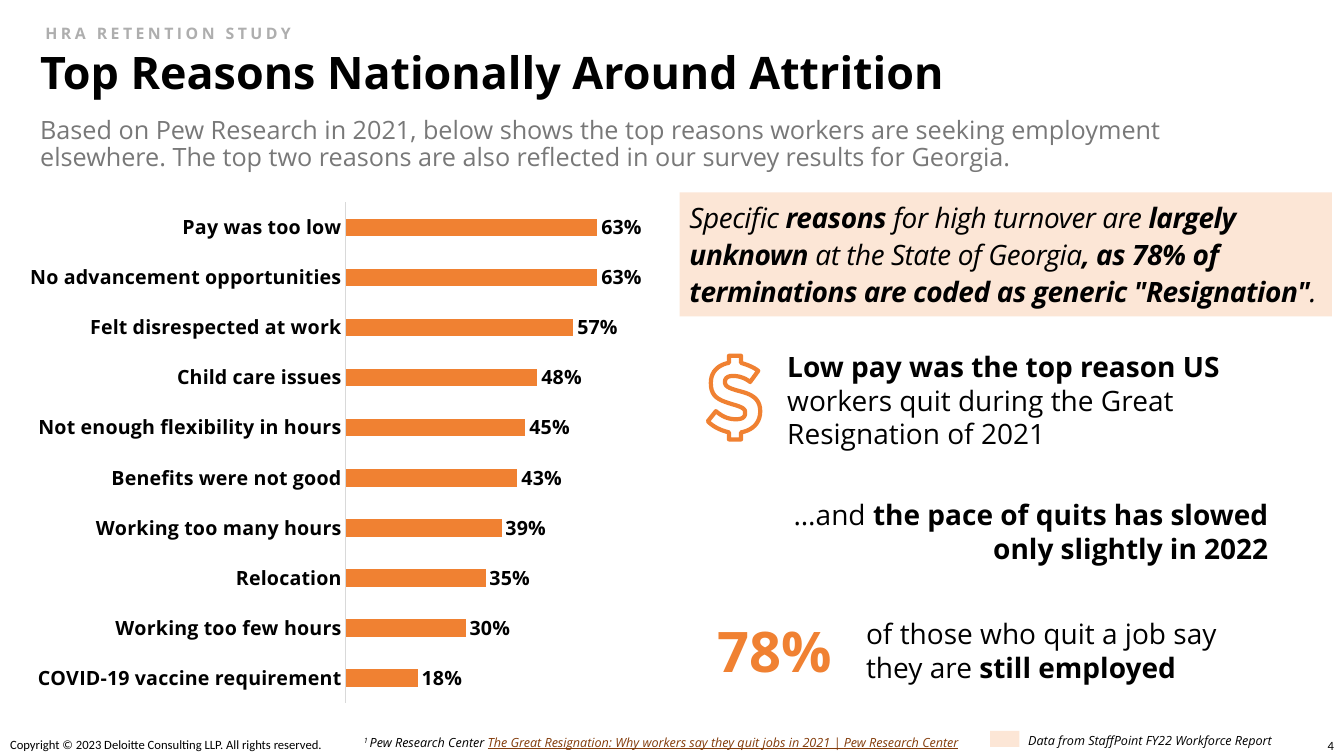
from lxml.etree import SubElement, Element
from pptx import Presentation
from pptx.chart.data import CategoryChartData
from pptx.dml.color import RGBColor
from pptx.enum.chart import XL_CHART_TYPE, XL_LABEL_POSITION, XL_TICK_MARK
from pptx.enum.shapes import MSO_SHAPE
from pptx.enum.text import MSO_ANCHOR, PP_ALIGN
from pptx.oxml.ns import qn
from pptx.util import Emu, Pt

EMU_PER_PX = 9144
ORANGE, PEACH, BLACK = "F08132", "FCE6D6", "000000"
BODY_FONT, FOOTER_FONT = "Open Sans", "Calibri"

REASONS = {
    "Pay was too low": 0.63,
    "No advancement opportunities": 0.63,
    "Felt disrespected at work": 0.57,
    "Child care issues": 0.48,
    "Not enough flexibility in hours": 0.45,
    "Benefits were not good": 0.43,
    "Working too many hours": 0.39,
    "Relocation": 0.35,
    "Working too few hours": 0.3,
    "COVID-19 vaccine requirement": 0.18,
}

DOLLAR_START = (733, 388)
DOLLAR_OUTLINE = [
    (722, 385, 719, 383, 719, 379), (719, 375, 722, 373, 727, 373),
    (733, 373, 739, 375, 744, 379), (752, 368), (747, 364, 741, 362, 735, 360),
    (735, 353), (723, 353), (723, 360), (712, 362, 705, 369, 705, 380),
    (705, 394, 713, 397, 726, 401), (737, 404, 739, 406, 739, 409), (739, 410),
    (739, 414, 736, 416, 730, 416), (722, 416, 716, 413, 710, 408), (702, 418),
    (708, 424, 715, 427, 723, 429), (723, 436), (735, 436), (735, 429),
    (746, 427, 754, 420, 754, 408), (754, 396, 746, 391, 733, 388),
]
CURVE_STEPS = 10


def px(length):
    return Emu(int(length * EMU_PER_PX))


def color(hex_string):
    return RGBColor.from_string(hex_string)


def style_font(font, size, hex_string=BLACK, bold=False, name=BODY_FONT):
    font.name, font.size, font.bold = name, Pt(size), bold
    font.color.rgb = color(hex_string)


def write_text(shape, runs, size, hex_string=BLACK, name=BODY_FONT, bold=None,
               italic=None, align=PP_ALIGN.LEFT, line_spacing=None,
               tracking=None, inset=True, anchor=MSO_ANCHOR.TOP):
    frame = shape.text_frame
    frame.word_wrap = True
    frame.vertical_anchor = anchor
    if not inset:
        frame.margin_left = frame.margin_right = 0
        frame.margin_top = frame.margin_bottom = 0
    paragraph = frame.paragraphs[0]
    paragraph.alignment = align
    paragraph.line_spacing = line_spacing
    style_font(paragraph.font, size, hex_string, bold, name)
    paragraph.font.italic = italic
    for text, *emphasis in runs:
        run = paragraph.add_run()
        run.text = text
        if emphasis:
            run.font.bold = True
        if tracking:
            run._r.get_or_add_rPr().set("spc", str(tracking))
    return paragraph


def add_text(slide, box, runs, size, **options):
    text_box = slide.shapes.add_textbox(*map(px, box))
    return write_text(text_box, runs, size, **options)


def add_panel(slide, box):
    panel = slide.shapes.add_shape(MSO_SHAPE.RECTANGLE, *map(px, box))
    panel.shadow.inherit = False
    panel.fill.solid()
    panel.fill.fore_color.rgb = color(PEACH)
    panel.line.fill.background()
    return panel


def curve_points(start, first, second, end):
    for step in range(1, CURVE_STEPS + 1):
        t = step / CURVE_STEPS
        u = 1 - t
        yield tuple(u**3 * a + 3 * u * u * t * b + 3 * u * t * t * c + t**3 * d
                    for a, b, c, d in zip(start, first, second, end))


def add_dollar_sign(slide):
    points = [DOLLAR_START]
    for segment in DOLLAR_OUTLINE:
        if len(segment) == 2:
            points.append(segment)
        else:
            points.extend(curve_points(points[-1], segment[:2], segment[2:4], segment[4:]))
    builder = slide.shapes.build_freeform(*points[0], scale=EMU_PER_PX)
    builder = slide.shapes.build_freeform(*map(px, points[0]))
    builder.add_line_segments([tuple(map(px, point)) for point in points[1:]], close=True)
    dollar = builder.convert_to_shape()
    dollar.shadow.inherit = False
    dollar.fill.background()
    dollar.line.color.rgb = color(ORANGE)
    dollar.line.width = Pt(3)


def set_plot_layout(chart, x, y, width, height):
    plot_area = chart._chartSpace.chart.plotArea
    for existing in plot_area.findall(qn("c:layout")):
        plot_area.remove(existing)
    layout = Element(qn("c:layout"))
    plot_area.insert(0, layout)
    manual = SubElement(layout, qn("c:manualLayout"))
    settings = {"layoutTarget": "inner", "xMode": "edge", "yMode": "edge",
                "x": x, "y": y, "w": width, "h": height}
    for tag, value in settings.items():
        SubElement(manual, qn(f"c:{tag}")).set("val", str(value))


def add_reasons_chart(slide, box):
    data = CategoryChartData(number_format="0%")
    data.categories = list(REASONS)
    data.add_series("Series 1", list(REASONS.values()))
    frame = slide.shapes.add_chart(XL_CHART_TYPE.BAR_CLUSTERED, *map(px, box), data)
    chart = frame.chart
    chart.has_legend = False
    chart.has_title = False
    style_font(chart.font, 18)
    set_plot_layout(chart, 0.455, 0.028, 0.525, 0.939)

    reasons = chart.category_axis
    reasons.reverse_order = True
    reasons.major_tick_mark = reasons.minor_tick_mark = XL_TICK_MARK.NONE
    reasons.format.line.color.rgb = color("D9D9D9")
    reasons.format.line.width = Pt(0.75)
    style_font(reasons.tick_labels.font, 14, bold=True)

    shares = chart.value_axis
    shares.minimum_scale, shares.maximum_scale = 0, 1
    shares.has_major_gridlines = False
    shares.visible = False

    plot = chart.plots[0]
    plot.gap_width = 182
    plot.vary_by_categories = False
    bars = plot.series[0].format.fill
    bars.solid()
    bars.fore_color.rgb = color(ORANGE)
    plot.has_data_labels = True
    labels = plot.data_labels
    labels.show_value = True
    labels.position = XL_LABEL_POSITION.OUTSIDE_END
    labels.number_format, labels.number_format_is_linked = "0%", False
    style_font(labels.font, 14, bold=True)


def add_source_note(slide, box):
    paragraph = add_text(slide, box, [
        ("1 ",), ("Pew Research Center ",),
        ("The Great Resignation: Why workers say they quit jobs in 2021 | Pew Research Center",),
    ], 9, italic=True)
    marker, _, title = paragraph.runs
    marker._r.get_or_add_rPr().set("baseline", "30000")
    title.font.underline = True
    title.font.color.rgb = color("833C0B")


def main():
    presentation = Presentation()
    presentation.slide_width, presentation.slide_height = px(1333), px(750)
    slide = presentation.slides.add_slide(presentation.slide_layouts[6])

    add_text(slide, (1289, 732, 34, 15), [("4",)], 9, name=FOOTER_FONT,
             align=PP_ALIGN.RIGHT, inset=False)
    add_text(slide, (45, 23, 460, 21), [("HRA RETENTION STUDY",)], 11.3,
             hex_string="AEAEAE", bold=True, tracking=250, inset=False)
    add_text(slide, (10, 733, 586, 14),
             [("Copyright © 2023 Deloitte Consulting LLP. All rights reserved.",)], 9,
             name=FOOTER_FONT, line_spacing=Pt(9.5), inset=False)
    add_text(slide, (30, 37, 1150, 75), [("Top Reasons Nationally Around Attrition",)], 32,
             bold=True, line_spacing=0.9, anchor=MSO_ANCHOR.MIDDLE)
    add_text(slide, (30, 112, 1150, 37), [(
        "Based on Pew Research in 2021, below shows the top reasons workers are seeking "
        "employment elsewhere. The top two reasons are also reflected in our survey "
        "results for Georgia.",)], 18, hex_string="787878", line_spacing=0.9)
    add_reasons_chart(slide, (0, 186, 754, 529))

    add_text(slide, (771, 342, 497, 111), [
        ("Low pay was the top reason US ", "bold"),
        ("workers quit during the Great Resignation of 2021",)], 20)
    add_text(slide, (771, 489, 497, 77), [
        ("…and ",), ("the pace of quits has slowed only slightly in 2022", "bold")], 20,
        align=PP_ALIGN.RIGHT)
    add_dollar_sign(slide)
    add_text(slide, (702, 607, 136, 77), [("78%",)], 40, hex_string=ORANGE, bold=True)
    add_text(slide, (859, 612, 366, 67), [
        ("of those who quit a job say they are ",), ("still employed", "bold")], 20,
        inset=False)

    add_source_note(slide, (351, 724, 625, 25))
    write_text(add_panel(slide, (674, 191, 647, 123)), [
        ("Specific",), (" reasons ", "bold"), ("for high turnover are ",),
        ("largely unknown ", "bold"), ("at the State of Georgia",),
        (', as 78% of terminations are coded as generic "Resignation"', "bold"), (".",),
    ], 20, italic=True, line_spacing=1.1, tracking=-30)
    add_panel(slide, (982, 725, 29, 16))
    add_text(slide, (1010, 722, 476, 25), [("Data from StaffPoint FY22 Workforce Report",)], 9,
             italic=True)
    presentation.save("out.pptx")


if __name__ == "__main__":
    main()
